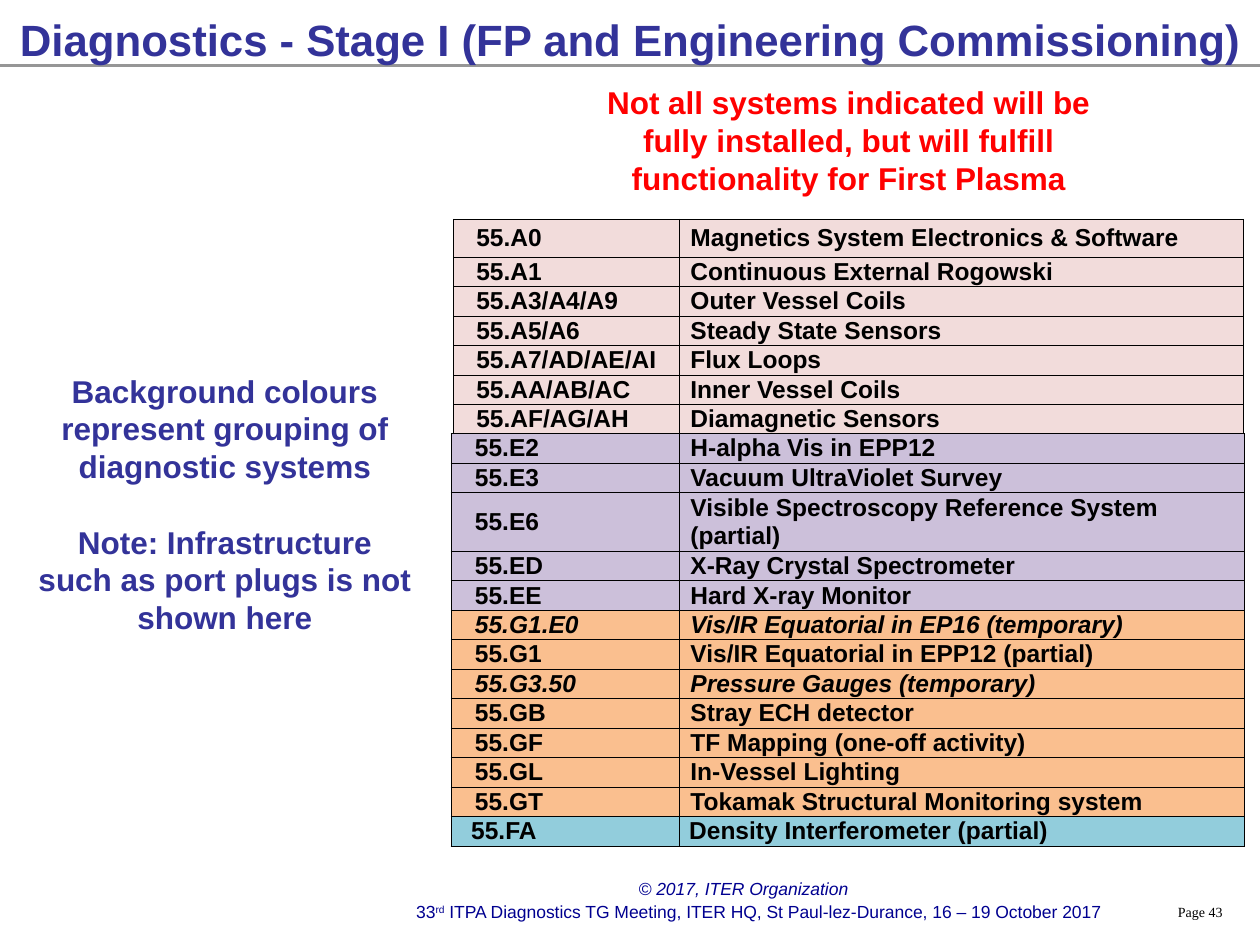
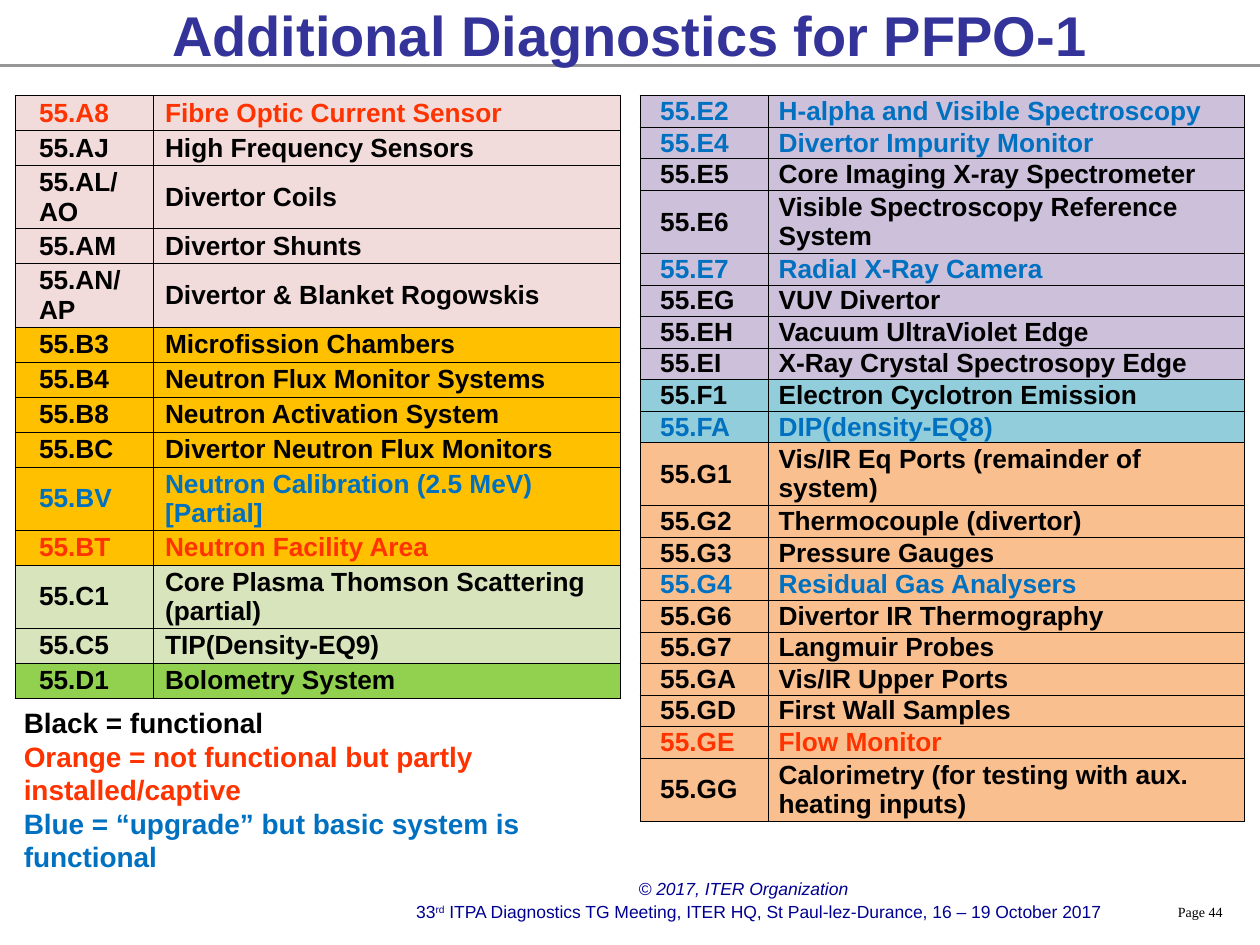
from lxml import etree
from pptx import Presentation
from pptx import util as u
from pptx.dml.color import RGBColor
from pptx.enum import shapes, text
from pptx.oxml import ns

# Colours
BLACK = RGBColor(0x00, 0x00, 0x00)
INDIGO = RGBColor(0x33, 0x33, 0x99)
NAVY = RGBColor(0x00, 0x00, 0x90)
GREY = RGBColor(0x96, 0x96, 0x96)
RED = RGBColor(0xFF, 0x00, 0x00)
ORANGE = RGBColor(0xFF, 0x33, 0x00)
BLUE = RGBColor(0x00, 0x70, 0xC0)
PINK = RGBColor(0xF2, 0xDC, 0xDB)
LILAC = RGBColor(0xCC, 0xC0, 0xDA)
PEACH = RGBColor(0xFA, 0xBF, 0x8F)
AQUA = RGBColor(0x92, 0xCD, 0xDC)
GOLD = RGBColor(0xFF, 0xC0, 0x00)
SAGE = RGBColor(0xD8, 0xE4, 0xBC)
GREEN = RGBColor(0x92, 0xD0, 0x50)

LEFT, MID = text.PP_ALIGN.LEFT, text.PP_ALIGN.CENTER

# Slide size, split into a grid of 100 columns and 100 rows
deck = Presentation()
deck.slide_width, deck.slide_height = u.Inches(10), u.Inches(7.5)
COL, ROW = deck.slide_width / 100, deck.slide_height / 100


def write(slide, area, lines, size, inks, align=MID, bold=True, face="Arial"):
    """Add a text box; inks holds one colour per line."""
    x, y, w, h = area
    box = slide.shapes.add_textbox(int(x * COL), int(y * ROW), int(w * COL), int(h * ROW))
    frame = box.text_frame
    frame.word_wrap = True
    frame.text = "\n".join(lines)
    for para, ink in zip(frame.paragraphs, inks):
        para.alignment = align
        for run in para.runs:
            font = run.font
            font.name, font.size, font.bold = face, u.Pt(size), bold
            font.color.rgb = ink
    return frame


def fill_grid(slide, area, cols, groups, size, pads, tall, tall_h):
    """Add a table of coloured groups; rows in tall get tall_h, the rest share what is left."""
    x, y, h = area
    rows = [(fill, row) for fill, group in groups for row in group]
    grid = slide.shapes.add_table(len(rows), len(cols), int(x * COL), int(y * ROW),
                                  int(sum(cols) * COL), int(h * ROW)).table
    grid.first_row = grid.horz_banding = False
    for col, width in zip(grid.columns, cols):
        col.width = int(width * COL)
    low_h = (h - len(tall) * tall_h) / (len(rows) - len(tall))
    for r, (fill, (code, name, *style)) in enumerate(rows):
        grid.rows[r].height = int((tall_h if r in tall else low_h) * ROW)
        for c, words in enumerate((code, name)):
            cell = grid.cell(r, c)
            cell.text_frame.text = words
            cell.vertical_anchor = text.MSO_ANCHOR.MIDDLE
            cell.margin_left = u.Inches(pads[c])
            cell.margin_right = cell.margin_top = cell.margin_bottom = 0
            cell.fill.solid()
            cell.fill.fore_color.rgb = fill
            font = cell.text_frame.paragraphs[0].runs[0].font
            font.name, font.size, font.bold = "Arial", u.Pt(size), True
            font.italic = "italic" in style
            font.color.rgb = next((s for s in style if s != "italic"), BLACK)
            # Thin black border on each side
            props = cell._tc.get_or_add_tcPr()
            for i, side in enumerate(("lnL", "lnR", "lnT", "lnB")):
                line = etree.Element(ns.qn("a:" + side), w=str(u.Pt(0.5)))
                paint = etree.SubElement(line, ns.qn("a:solidFill"))
                etree.SubElement(paint, ns.qn("a:srgbClr"), val=str(BLACK))
                props.insert(i, line)
    return grid


# Shared parts: rule, footers and title
titles = [
    ("Diagnostics - Stage I (FP and Engineering Commissioning)", 25, (0, 0.27, 100, 7.73)),
    ("Additional Diagnostics for PFPO-1", 32, (0, 0, 100, 7.2)),
]
for page, (title, size, area) in enumerate(titles, 43):
    slide = deck.slides.add_slide(deck.slide_layouts[6])
    rule = slide.shapes.add_connector(shapes.MSO_CONNECTOR.STRAIGHT, 0, int(6.93 * ROW),
                                      deck.slide_width, int(6.93 * ROW))
    rule.line.color.rgb = GREY
    rule.line.width = u.Pt(1.25)
    etree.SubElement(rule._element.spPr, ns.qn("a:effectLst"))

    write(slide, (92.5, 94.93, 6.4, 3.07), [f"Page {page}"], 8, [BLACK], LEFT, False,
          "Times New Roman")
    rights = write(slide, (49.7, 92.27, 20.8, 3.6), ["© 2017, ITER Organization"], 10,
                   [NAVY], LEFT, False)
    rights.paragraphs[0].runs[0].font.italic = True

    venue = write(slide, (28.5, 94.67, 63.4, 3.6), ["33"], 10, [NAVY], MID, False)
    for words in ("rd", " ITPA Diagnostics TG Meeting, ITER HQ, St Paul-lez-Durance, "
                        "16 – 19 October 2017"):
        run = venue.paragraphs[0].add_run()
        run.text = words
        run.font.name, run.font.size = "Arial", u.Pt(10)
        run.font.color.rgb = NAVY
        if words == "rd":
            run.font._element.set("baseline", "30000")

    head = write(slide, area, [title], size, [INDIGO])
    head.vertical_anchor = text.MSO_ANCHOR.MIDDLE

first, second = deck.slides

# Stage I: notes
notes = write(first, (2, 38.67, 31.7, 29.6),
              ["Background colours represent grouping of diagnostic systems",
               "Note: Infrastructure such as port plugs is not shown here"],
              18, [INDIGO, INDIGO])
notes.paragraphs[1].space_before = u.Pt(21.5)
write(first, (46.9, 8.13, 40.9, 13.47),
      ["Not all systems indicated will be fully installed, but will fulfill "
       "functionality for First Plasma"], 18, [RED])

# Stage I: magnetics
coils = [(PINK, [
    ("55.A0", "Magnetics System Electronics & Software"),
    ("55.A1", "Continuous External Rogowski"),
    ("55.A3/A4/A9", "Outer Vessel Coils"),
    ("55.A5/A6", "Steady State Sensors"),
    ("55.A7/AD/AE/AI", "Flux Loops"),
    ("55.AA/AB/AC", "Inner Vessel Coils"),
    ("55.AF/AG/AH", "Diamagnetic Sensors"),
])]
fill_grid(first, (36, 23.2, 22.67), (17.9, 44.8), coils, 14, (0.18, 0.09), [0], 4)

# Stage I: other systems
others = [
    (LILAC, [
        ("55.E2", "H-alpha Vis in EPP12"),
        ("55.E3", "Vacuum UltraViolet Survey"),
        ("55.E6", "Visible Spectroscopy Reference System (partial)"),
        ("55.ED", "X-Ray Crystal Spectrometer"),
        ("55.EE", "Hard X-ray Monitor"),
    ]),
    (PEACH, [
        ("55.G1.E0", "Vis/IR Equatorial in EP16 (temporary)", "italic"),
        ("55.G1", "Vis/IR Equatorial in EPP12 (partial)"),
        ("55.G3.50", "Pressure Gauges (temporary)", "italic"),
        ("55.GB", "Stray ECH detector"),
        ("55.GF", "TF Mapping (one-off activity)"),
        ("55.GL", "In-Vessel Lighting"),
        ("55.GT", "Tokamak Structural Monitoring system"),
    ]),
    (AQUA, [("55.FA", "Density Interferometer (partial)")]),
]
grid = fill_grid(first, (35.8, 45.87, 43.6), (18.1, 44.9), others, 14, (0.19, 0.09), [2], 6.2)
for c, pad in enumerate((0.16, 0.08)):
    grid.cell(12, c).margin_left = u.Inches(pad)

# PFPO-1: left table
west = [
    (PINK, [
        ("55.A8", "Fibre Optic Current Sensor", ORANGE),
        ("55.AJ", "High Frequency Sensors"),
        ("55.AL/AO", "Divertor Coils"),
        ("55.AM", "Divertor Shunts"),
        ("55.AN/AP", "Divertor & Blanket Rogowskis"),
    ]),
    (GOLD, [
        ("55.B3", "Microfission Chambers"),
        ("55.B4", "Neutron Flux Monitor Systems"),
        ("55.B8", "Neutron Activation System"),
        ("55.BC", "Divertor Neutron Flux Monitors"),
        ("55.BV", "Neutron Calibration (2.5 MeV) [Partial]", BLUE),
        ("55.BT", "Neutron Facility Area", ORANGE),
    ]),
    (SAGE, [
        ("55.C1", "Core Plasma Thomson Scattering (partial)"),
        ("55.C5", "TIP(Density-EQ9)"),
    ]),
    (GREEN, [("55.D1", "Bolometry System")]),
]
fill_grid(second, (1.2, 10.13, 61.87), (11, 37), west, 15, (0.19, 0.09), [2, 4, 9, 11], 6.2)

# PFPO-1: right table
east = [
    (LILAC, [
        ("55.E2", "H-alpha and Visible Spectroscopy", BLUE),
        ("55.E4", "Divertor Impurity Monitor", BLUE),
        ("55.E5", "Core Imaging X-ray Spectrometer"),
        ("55.E6", "Visible Spectroscopy Reference System"),
        ("55.E7", "Radial X-Ray Camera", BLUE),
        ("55.EG", "VUV Divertor"),
        ("55.EH", "Vacuum UltraViolet Edge"),
        ("55.EI", "X-Ray Crystal Spectrosopy Edge"),
    ]),
    (AQUA, [
        ("55.F1", "Electron Cyclotron Emission"),
        ("55.FA", "DIP(density-EQ8)", BLUE),
    ]),
    (PEACH, [
        ("55.G1", "Vis/IR Eq Ports (remainder of system)"),
        ("55.G2", "Thermocouple (divertor)"),
        ("55.G3", "Pressure Gauges"),
        ("55.G4", "Residual Gas Analysers", BLUE),
        ("55.G6", "Divertor IR Thermography"),
        ("55.G7", "Langmuir Probes"),
        ("55.GA", "Vis/IR Upper Ports"),
        ("55.GD", "First Wall Samples"),
        ("55.GE", "Flow Monitor", ORANGE),
        ("55.GG", "Calorimetry (for testing with aux. heating inputs)"),
    ]),
]
fill_grid(second, (50.8, 10.13, 73.87), (10.2, 37.8), east, 15, (0.16, 0.08), [3, 10, 19], 6.2)

# PFPO-1: colour key
write(second, (0.9, 74, 48.8, 19.33),
      ["Black = functional",
       "Orange = not functional but partly installed/captive",
       "Blue = “upgrade” but basic system is functional"],
      16, [BLACK, ORANGE, BLUE], LEFT)

deck.save("out.pptx")
